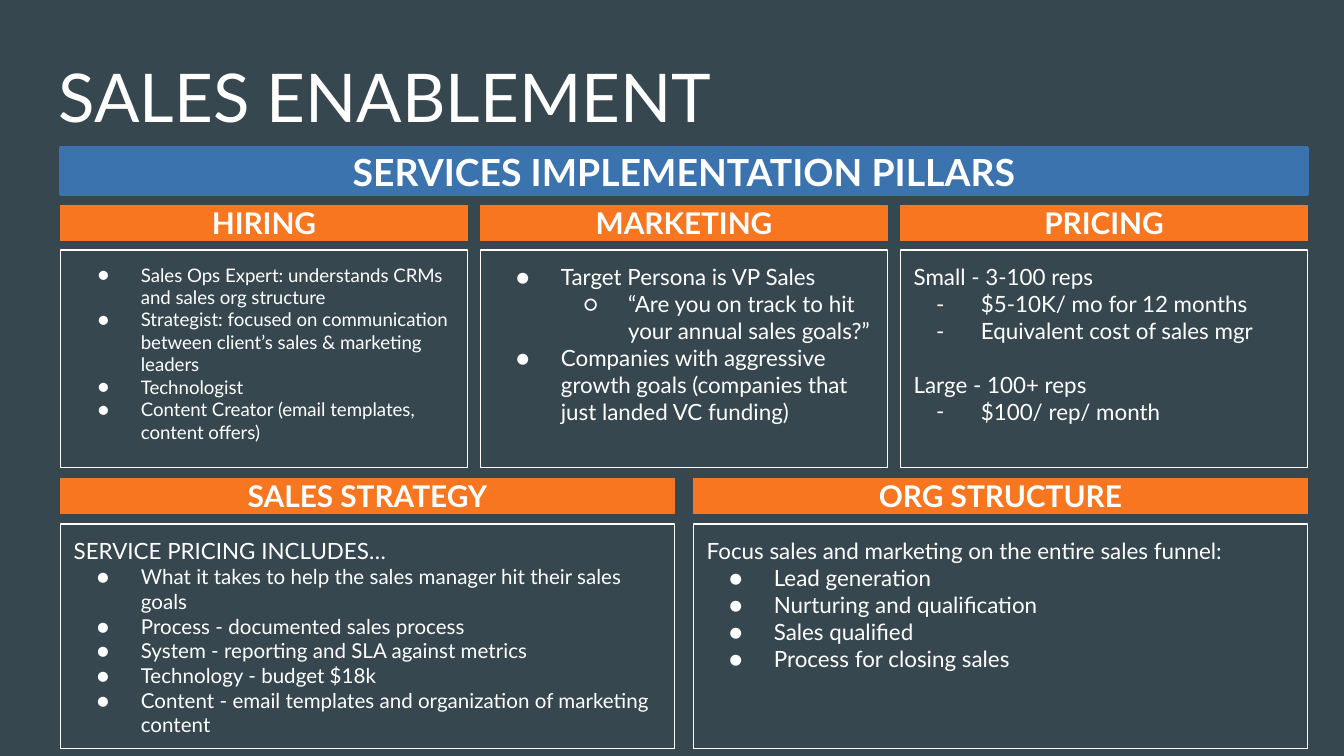
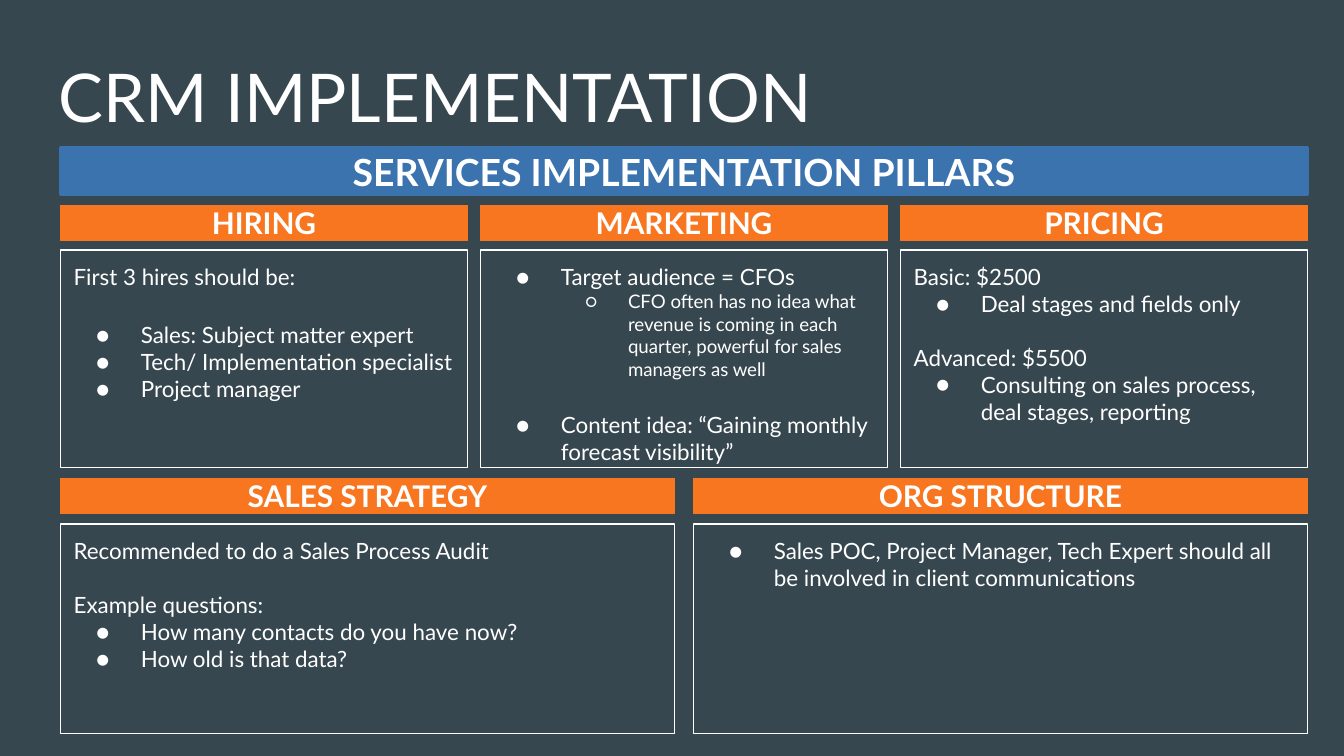
from lxml import etree
from pptx import Presentation
from pptx.dml.color import RGBColor
from pptx.enum.shapes import MSO_SHAPE
from pptx.enum.text import MSO_ANCHOR, PP_ALIGN
from pptx.oxml.ns import qn
from pptx.util import Inches, Pt

RECT = MSO_SHAPE.RECTANGLE
TOP, MIDDLE = MSO_ANCHOR.TOP, MSO_ANCHOR.MIDDLE
LEFT, CENTER = PP_ALIGN.LEFT, PP_ALIGN.CENTER

SLATE = RGBColor(0x37, 0x47, 0x4F)
BLUE = RGBColor(0x3B, 0x73, 0xAF)
ORANGE = RGBColor(0xF7, 0x76, 0x1F)
WHITE = RGBColor(0xFF, 0xFF, 0xFF)

FONT = "Lato"
EDGE, SPAN = 0.45, 9.28
BAR = 0.26
LINE = 14.4
BREAK = 16.7
DOT, RING, DASH = "●", "○", "-"

ROWS = [
    (1.53, 1.86, 3.03, ["HIRING", "MARKETING", "PRICING"]),
    (3.56, 3.9, 4.57, ["SALES STRATEGY", "ORG STRUCTURE"]),
]

SLIDES = [
    ("SALES ENABLEMENT", (1.62, 1.67), {
        "HIRING": [
            (DOT, 10, "Sales Ops Expert: understands CRMs and sales org structure"),
            (DOT, 10, "Strategist: focused on communication between client’s sales & marketing leaders"),
            (DOT, 10, "Technologist"),
            (DOT, 10, "Content Creator (email templates, content offers)"),
        ],
        "MARKETING": [
            (DOT, 12, "Target Persona is VP Sales"),
            (RING, 12, "“Are you on track to hit your annual sales goals?”"),
            (DOT, 12, "Companies with aggressive growth goals (companies that just landed VC funding)"),
        ],
        "PRICING": [
            ("", 12, "Small - 3-100 reps"),
            (DASH, 12, "$5-10K/ mo for 12 months"),
            (DASH, 12, "Equivalent cost of sales mgr"),
            ("", 12, "Large - 100+ reps", LINE),
            (DASH, 12, "$100/ rep/ month"),
        ],
        "SALES STRATEGY": [
            ("", 12, "SERVICE PRICING INCLUDES…"),
            (DOT, 11, "What it takes to help the sales manager hit their sales goals"),
            (DOT, 11, "Process - documented sales process"),
            (DOT, 11, "System - reporting and SLA against metrics"),
            (DOT, 11, "Technology - budget $18k"),
            (DOT, 11, "Content - email templates and organization of marketing content"),
        ],
        "ORG STRUCTURE": [
            ("", 12, "Focus sales and marketing on the entire sales funnel:"),
            (DOT, 12, "Lead generation"),
            (DOT, 12, "Nurturing and qualification"),
            (DOT, 12, "Sales qualified"),
            (DOT, 12, "Process for closing sales"),
        ],
    }),
    ("CRM IMPLEMENTATION", (1.62, 1.56), {
        "HIRING": [
            ("", 12, "First 3 hires should be:"),
            (DOT, 12, "Sales: Subject matter expert", BREAK),
            (DOT, 12, "Tech/ Implementation specialist"),
            (DOT, 12, "Project manager"),
        ],
        "MARKETING": [
            (DOT, 12, "Target audience = CFOs"),
            (RING, 10, "CFO often has no idea what revenue is coming in each quarter, powerful for sales managers as well"),
            (DOT, 12, "Content idea: “Gaining monthly forecast visibility”", BREAK),
        ],
        "PRICING": [
            ("", 12, "Basic: $2500"),
            (DOT, 12, "Deal stages and fields only"),
            ("", 12, "Advanced: $5500", LINE),
            (DOT, 12, "Consulting on sales process, deal stages, reporting"),
        ],
        "SALES STRATEGY": [
            ("", 12, "Recommended to do a Sales Process Audit"),
            ("", 12, "Example questions:", LINE),
            (DOT, 12, "How many contacts do you have now?"),
            (DOT, 12, "How old is that data?"),
        ],
        "ORG STRUCTURE": [
            (DOT, 12, "Sales POC, Project Manager, Tech Expert should all be involved in client communications"),
        ],
    }),
]


def write(shape, items, align=LEFT, anchor=TOP, bold=False):
    frame = shape.text_frame
    frame.word_wrap = True
    frame.vertical_anchor = anchor
    frame.margin_left = frame.margin_right = Inches(0.1)
    frame.margin_top = frame.margin_bottom = Inches(0.1)
    for i, (mark, size, text, *gap) in enumerate(items):
        para = frame.add_paragraph() if i else frame.paragraphs[0]
        para.text = text
        para.alignment = align
        if gap:
            para.space_before = Pt(gap[0])
        if mark:
            para.level = int(mark == RING)
            props = para._p.get_or_add_pPr()
            props.set("marL", str(Inches(0.5 + 0.5 * para.level)))
            props.set("indent", str(-Inches(0.25 + size / 144)))
            tint = etree.SubElement(props, qn("a:buClr"))
            etree.SubElement(tint, qn("a:srgbClr")).set("val", str(WHITE))
            etree.SubElement(props, qn("a:buSzPts")).set("val", str(size * 100))
            etree.SubElement(props, qn("a:buFont")).set("typeface", FONT)
            etree.SubElement(props, qn("a:buChar")).set("char", mark)
        font = para.font
        font.name, font.size, font.bold = FONT, Pt(size), bold
        font.color.rgb = WHITE


def box(slide, x, y, w, h, fill, edge, width=0.75):
    shape = slide.shapes.add_shape(RECT, Inches(x), Inches(y), Inches(w), Inches(h))
    shape.shadow.inherit = False
    if fill is None:
        shape.fill.background()
    else:
        shape.fill.solid()
        shape.fill.fore_color.rgb = fill
    shape.line.color.rgb = edge
    shape.line.width = Pt(width)
    return shape


deck = Presentation()
deck.slide_width = Inches(10)
deck.slide_height = deck.slide_width * 9 // 16

for title, heights, notes in SLIDES:
    slide = deck.slides.add_slide(deck.slide_layouts[6])
    slide.background.fill.solid()
    slide.background.fill.fore_color.rgb = SLATE

    head = slide.shapes.add_textbox(Inches(0.34), Inches(0.31), Inches(9.32), Inches(1.06))
    write(head, [("", 36, title)])
    band = box(slide, EDGE, 1.1, SPAN, 0.35, BLUE, BLUE, 1.5)
    write(band, [("", 20, "SERVICES IMPLEMENTATION PILLARS")], CENTER, MIDDLE, True)

    for (top, low, wide, names), tall in zip(ROWS, heights):
        step = (SPAN - wide) / (len(names) - 1)
        for i, name in enumerate(names):
            x = EDGE + i * step
            bar = box(slide, x, top, wide, BAR, ORANGE, ORANGE)
            write(bar, [("", 16, name)], CENTER, MIDDLE, True)
            write(box(slide, x, low, wide, tall, None, WHITE), notes[name])

deck.save("out.pptx")
